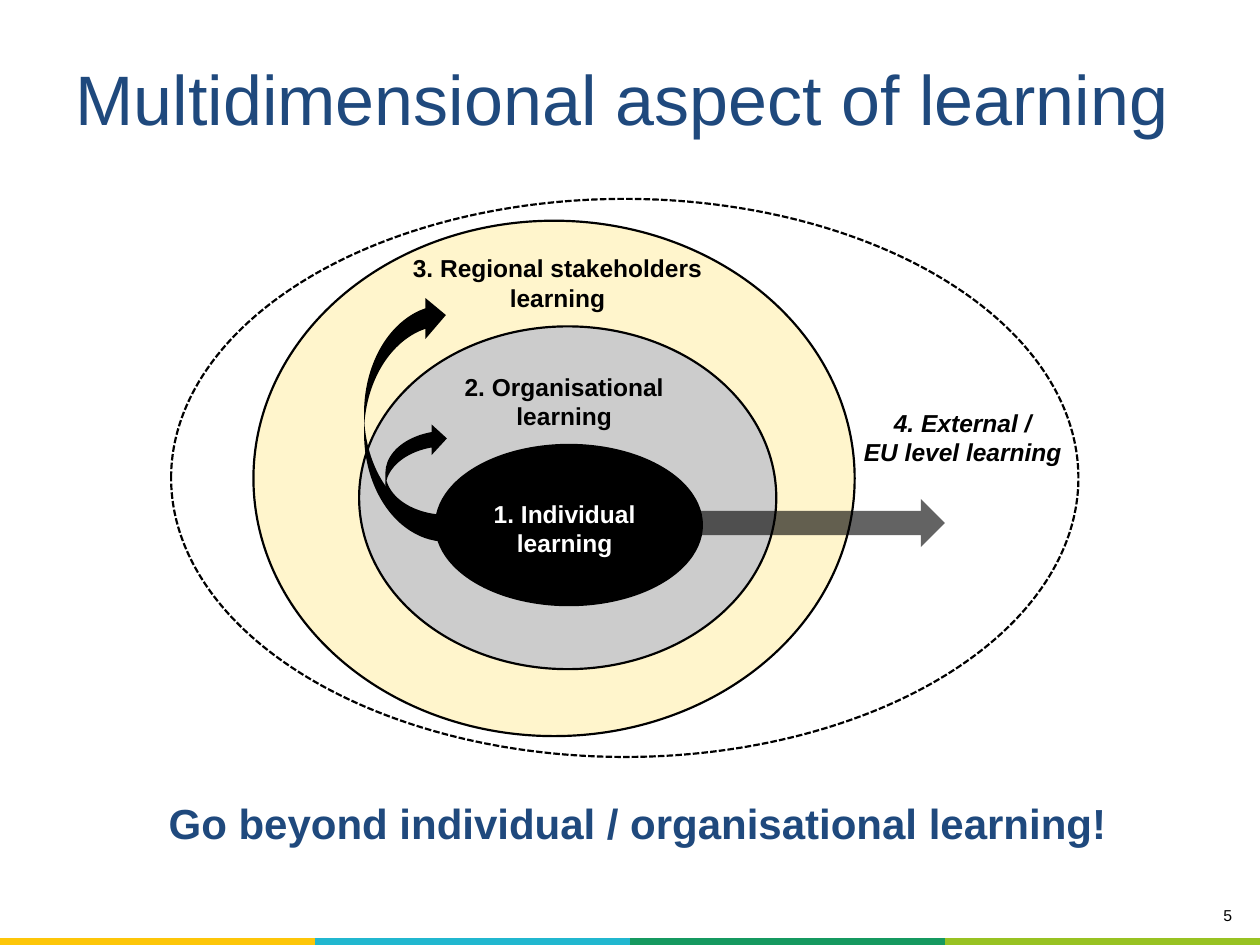
"""Build the slide on the multidimensional aspect of learning."""
import dataclasses

import lxml.etree
import pptx
import pptx.dml.color
import pptx.enum.dml
import pptx.enum.shapes
import pptx.enum.text
import pptx.oxml.ns
import pptx.util

Cm = pptx.util.Cm
Pt = pptx.util.Pt
Kind = pptx.enum.shapes.MSO_SHAPE
Align = pptx.enum.text.PP_ALIGN
Anchor = pptx.enum.text.MSO_ANCHOR
qn = pptx.oxml.ns.qn


@dataclasses.dataclass(frozen=True)
class Theme:
    """Hold the colours and type sizes."""
    face: str = "Arial"
    black: str = "000000"
    white: str = "FFFFFF"
    grey: str = "CCCCCC"
    cream: str = "FFF5CC"
    navy: str = "1F497D"
    band: tuple = ("FDC609", "21B7CF", "159960", "98C222")
    head: int = 40
    claim: int = 24
    label: int = 14
    small: int = 9
    edge: float = 1.25


def rgb(code):
    """Turn a hex code into a colour."""
    return pptx.dml.color.RGBColor.from_string(code)


def apply(thing, form):
    """Set each value of a format dict on an object."""
    for name, value in form.items():
        setattr(thing, name, value)


class Deck:
    """Draw styled elements on the current slide."""

    def __init__(self, theme):
        self.theme = theme
        self.show = pptx.Presentation()
        apply(self.show, {"slide_width": Cm(25.4), "slide_height": Cm(19.05)})
        self.slide = self.show.slides.add_slide(self.show.slide_layouts[5])

    def fill_text(self, frame, text, size, color, align, **form):
        """Fill a text frame with one paragraph per line."""
        frame.word_wrap = True
        frame.text = text
        for para in frame.paragraphs:
            para.alignment = align
            apply(para.font, {"name": self.theme.face, "size": Pt(size), **form})
            para.font.color.rgb = rgb(color)

    def title(self, box, text):
        """Place and format the title."""
        shape = self.slide.shapes.title
        apply(shape, dict(zip(("left", "top", "width", "height"), map(Cm, box))))
        self.fill_text(shape.text_frame, text, self.theme.head, self.theme.navy, Align.LEFT)
        shape.text_frame.vertical_anchor = Anchor.MIDDLE

    def text(self, box, text, size, color, align=Align.CENTER, **form):
        """Add a text box."""
        shape = self.slide.shapes.add_textbox(*map(Cm, box))
        self.fill_text(shape.text_frame, text, size, color, align, **form)

    def shape(self, kind, box, fill=None):
        """Add a preset shape without line or shadow."""
        shape = self.slide.shapes.add_shape(kind, *map(Cm, box))
        shape.shadow.inherit = False
        shape.line.fill.background()
        if fill:
            shape.fill.solid()
            shape.fill.fore_color.rgb = rgb(fill)
        else:
            shape.fill.background()
        return shape

    def ring(self, box, fill=None, dash=None):
        """Add an outlined ellipse."""
        line = self.shape(Kind.OVAL, box, fill).line
        line.color.rgb = rgb(self.theme.black)
        apply(line, {"width": Pt(self.theme.edge), "dash_style": dash})

    def curve(self, box):
        """Add a curved arrow that points up and right."""
        shape = self.shape(Kind.CURVED_RIGHT_ARROW, box, self.theme.black)
        shape.element.spPr.find(qn("a:xfrm")).set("flipV", "1")

    def arrow(self, box, alpha):
        """Add a see-through straight arrow."""
        shape = self.shape(Kind.RIGHT_ARROW, box, self.theme.black)
        color = shape.element.spPr.find(qn("a:solidFill"))[0]
        lxml.etree.SubElement(color, qn("a:alpha")).set("val", str(alpha * 1000))

    def band(self, box, fills):
        """Add a one-row table of coloured cells."""
        table = self.slide.shapes.add_table(1, len(fills), *map(Cm, box)).table
        apply(table, {"first_row": False, "horz_banding": False})
        style = table._tbl.tblPr.find(qn("a:tableStyleId"))
        style.text = "{2D5ABB26-0587-4C30-8999-92F81FD0307C}"
        sides = ("left", "top", "right", "bottom")
        for cell, fill in zip(table.rows[0].cells, fills):
            apply(cell, {f"margin_{side}": 0 for side in sides})
            cell.fill.solid()
            cell.fill.fore_color.rgb = rgb(fill)
            para = cell.text_frame.paragraphs[0]._p
            lxml.etree.SubElement(para, qn("a:endParaRPr")).set("sz", "100")


def main():
    """Build and save the slide."""
    look = Theme()
    deck = Deck(look)
    deck.band((0, 18.9, 25.4, 0.15), look.band)
    deck.text((20.09, 18.14, 5, 0.79), "5", look.small, look.black, Align.RIGHT)
    deck.title((1.27, 1.19, 22.86, 1.55), "Multidimensional aspect of learning")

    deck.ring((5.11, 4.45, 12.12, 10.39), look.cream)
    deck.ring((7.24, 6.58, 8.41, 6.91), look.grey)
    deck.ring((8.79, 8.97, 5.36, 3.23), look.black)
    deck.ring((3.45, 4.01, 18.29, 11.25), dash=pptx.enum.dml.MSO_LINE.SQUARE_DOT)

    labels = (
        ((7.85, 4.98, 6.78, 1.45), "3. Regional stakeholders learning", look.black, False),
        ((8.71, 7.37, 5.33, 1.42), "2. Organisational learning", look.black, False),
        ((16.59, 8.1, 5.64, 1.57), "4. External /\nEU level learning", look.black, True),
        ((9.53, 9.93, 3.71, 1.55), "1. Individual learning", look.white, False),
    )
    for box, text, color, slant in labels:
        deck.text(box, text, look.label, color, bold=True, italic=slant)

    deck.curve((7.77, 8.53, 1.24, 2.16))
    deck.curve((7.34, 5.94, 1.65, 4.98))
    deck.arrow((13.72, 10.06, 5.33, 0.97), 61)
    deck.text((1.55, 15.95, 22.61, 1.3), "Go beyond individual / organisational learning!",
              look.claim, look.navy, bold=True)
    deck.show.save("out.pptx")


if __name__ == "__main__":
    main()
